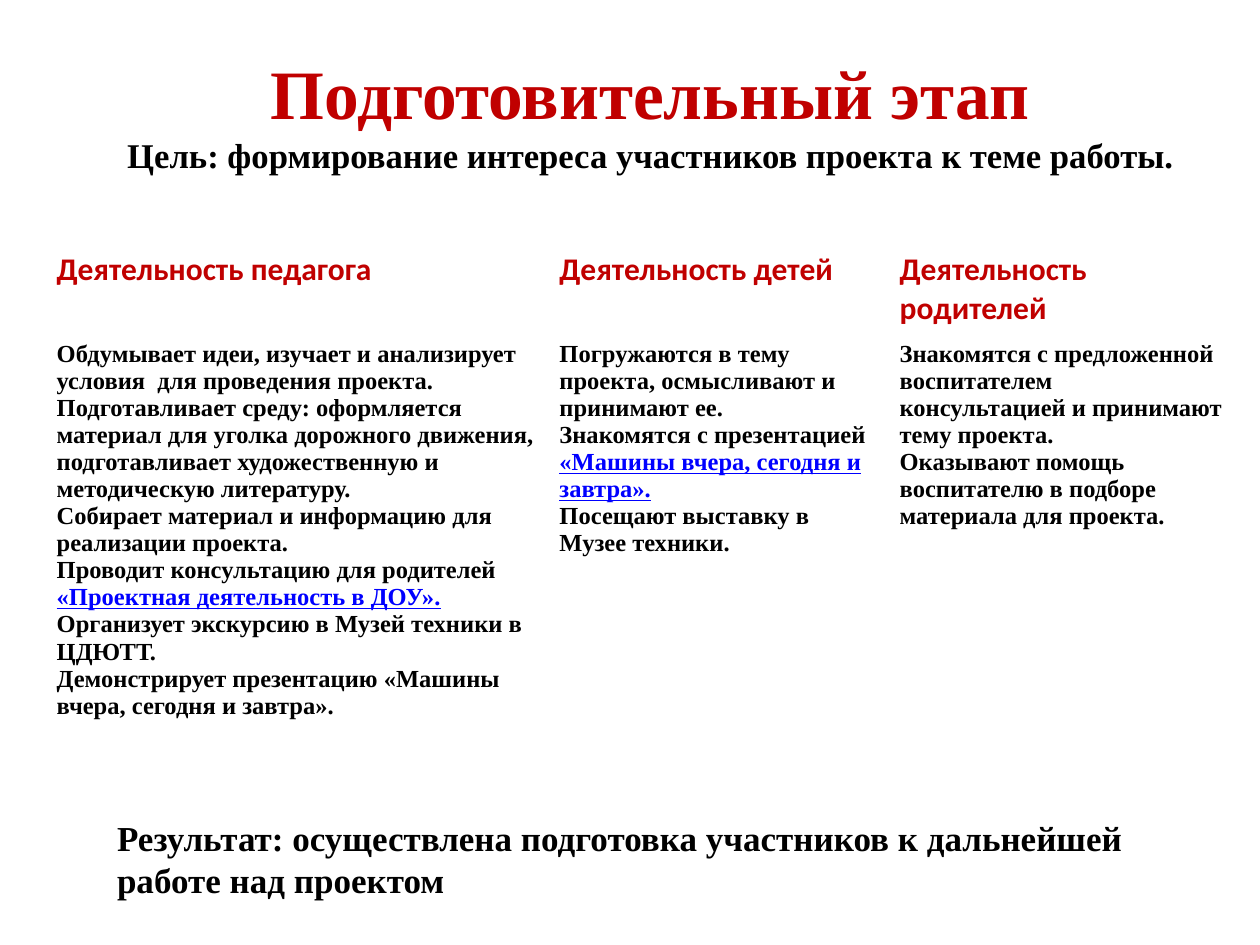
from pptx import Presentation
from pptx.dml.color import RGBColor
from pptx.enum.text import MSO_ANCHOR, MSO_AUTO_SIZE, PP_ALIGN
from pptx.util import Pt

COLORS = {"heading": "C00000", "text": "000000", "link": "0000FF"}
SERIF, SANS = "Times New Roman", "Calibri"
COLUMN_WIDTHS = (287.3, 194.4, 198.7)
ROW_HEIGHTS = (45, 248)
ACTIVITIES = {
    "Деятельность педагога": [
        ["Обдумывает идеи, изучает и анализирует условия  для проведения проекта."],
        ["Подготавливает среду: оформляется материал для уголка дорожного движения, "
         "подготавливает художественную и методическую литературу."],
        ["Собирает материал и информацию для реализации проекта."],
        ["Проводит консультацию для родителей ", "«Проектная деятельность в ДОУ»."],
        ["Организует экскурсию в Музей техники в ЦДЮТТ."],
        ["Демонстрирует презентацию «Машины вчера, сегодня и завтра»."],
    ],
    "Деятельность детей": [
        ["Погружаются в тему проекта, осмысливают и принимают ее."],
        ["Знакомятся с презентацией ", "«Машины вчера, сегодня и завтра»."],
        ["Посещают выставку в Музее техники."],
    ],
    "Деятельность родителей": [
        ["Знакомятся с предложенной воспитателем консультацией и принимают тему проекта."],
        ["Оказывают помощь воспитателю в подборе материала для проекта."],
    ],
}


def set_font(font, size, color, name=SERIF):
    """Apply a bold font of the given size, colour and typeface."""
    font.name, font.size, font.bold = name, Pt(size), True
    font.color.rgb = RGBColor.from_string(COLORS[color])


def place(shape, left, top, width, height):
    """Position a shape with lengths in points."""
    shape.left, shape.top = Pt(left), Pt(top)
    shape.width, shape.height = Pt(width), Pt(height)


def add_title(slide):
    """Fill the title with the stage name and its goal."""
    title = slide.shapes.title
    place(title, 65.5, 21, 612, 87)
    frame = title.text_frame
    frame.auto_size = MSO_AUTO_SIZE.NONE
    frame.vertical_anchor = MSO_ANCHOR.MIDDLE
    frame.text = ("Подготовительный этап\n"
                  "Цель: формирование интереса участников проекта к теме работы.")
    styles = ((39.6, "heading"), (19.8, "text"))
    for paragraph, (size, color) in zip(frame.paragraphs, styles):
        paragraph.alignment = PP_ALIGN.CENTER
        set_font(paragraph.font, size, color)


def fill_body(cell, entries):
    """Write one paragraph per entry, marking its second run as a link."""
    frame = cell.text_frame
    for index, entry in enumerate(entries):
        paragraph = frame.add_paragraph() if index else frame.paragraphs[0]
        set_font(paragraph.font, 14, "text")
        for position, text in enumerate(entry):
            run = paragraph.add_run()
            run.text = text
            set_font(run.font, 14, "link" if position else "text")
            if position:
                run.font.underline = True


def add_activities(slide):
    """Add the table of activities by participant."""
    frame = slide.shapes.add_table(2, len(ACTIVITIES), Pt(25.2), Pt(139.7),
                                   Pt(sum(COLUMN_WIDTHS)), Pt(sum(ROW_HEIGHTS)))
    table = frame.table
    table.horz_banding = False
    for row, height in zip(table.rows, ROW_HEIGHTS):
        row.height = Pt(height)
    for index, (heading, entries) in enumerate(ACTIVITIES.items()):
        table.columns[index].width = Pt(COLUMN_WIDTHS[index])
        header, body = table.cell(0, index), table.cell(1, index)
        header.text = heading
        set_font(header.text_frame.paragraphs[0].font, 18, "heading", SANS)
        fill_body(body, entries)
        for cell in (header, body):
            cell.fill.background()


def add_result(slide):
    """Add the result statement under the table."""
    box = slide.shapes.add_textbox(Pt(59.8), Pt(463), Pt(618), Pt(57))
    frame = box.text_frame
    frame.word_wrap = True
    frame.text = ("Результат: осуществлена подготовка участников "
                  "к дальнейшей работе над проектом")
    set_font(frame.paragraphs[0].font, 20, "text")


def main():
    """Build and save the slide."""
    presentation = Presentation()
    presentation.slide_width, presentation.slide_height = Pt(720), Pt(540)
    slide = presentation.slides.add_slide(presentation.slide_layouts[5])
    add_title(slide)
    add_activities(slide)
    add_result(slide)
    presentation.save("out.pptx")


if __name__ == "__main__":
    main()
